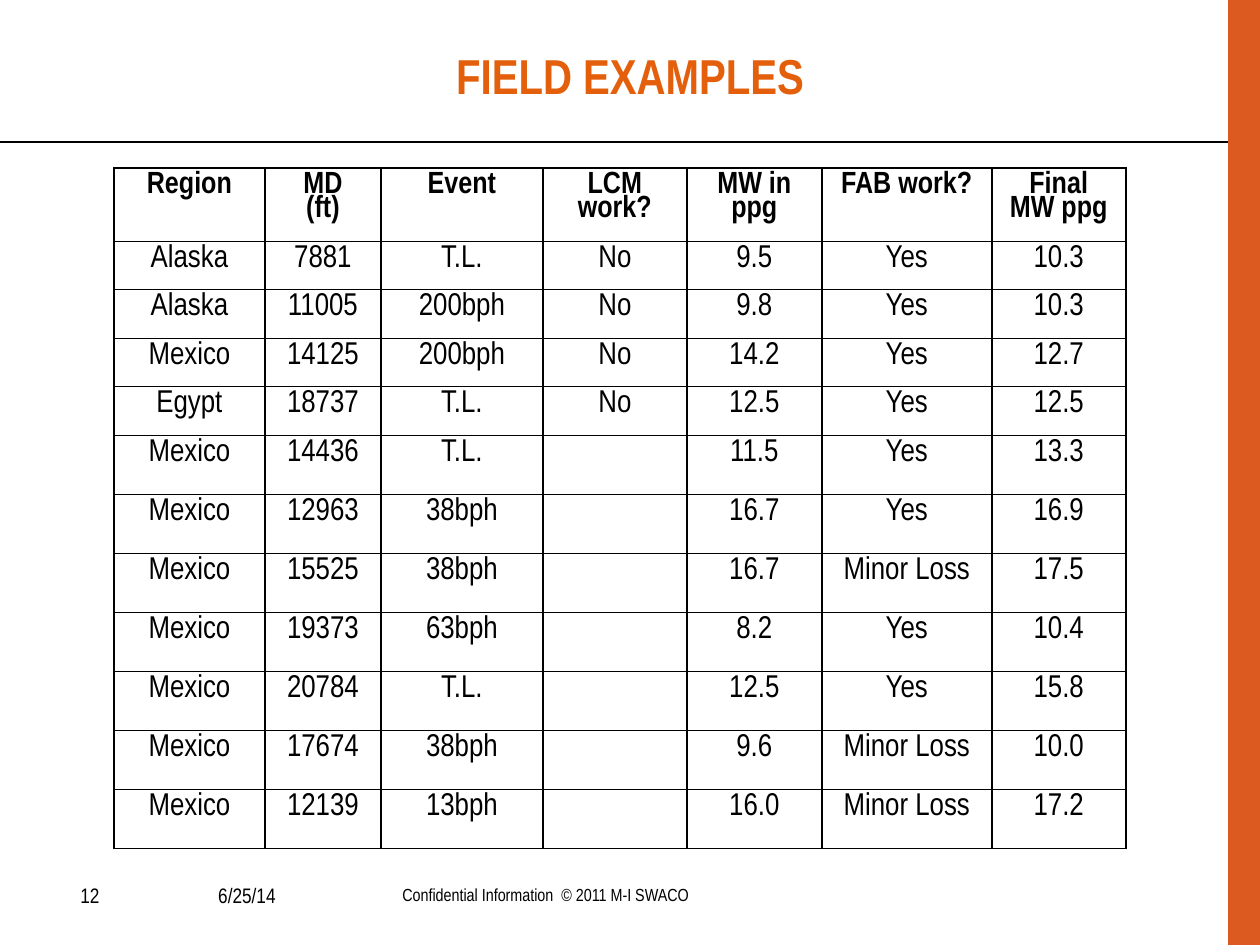
from lxml.etree import SubElement
from pptx import Presentation
from pptx.dml.color import RGBColor
from pptx.enum.shapes import MSO_CONNECTOR, MSO_SHAPE
from pptx.enum.text import MSO_ANCHOR, PP_ALIGN
from pptx.oxml.ns import qn
from pptx.util import Emu, Pt

FONT = "Arial Narrow"
COLORS = {"black": "000000", "title": "E35F0B", "band": "DC5A20"}


def px(value):
    return Emu(round(value * 914400 / 126))


def write(text_frame, text, size, align, color="black", bold=False, spacing=None):
    text_frame.text = text
    for paragraph in text_frame.paragraphs:
        paragraph.alignment = align
        if spacing:
            paragraph.line_spacing = spacing
        for run in paragraph.runs:
            run.font.name = FONT
            run.font.size = Pt(size)
            run.font.bold = bold
            run.font.color.rgb = RGBColor.from_string(COLORS[color])


presentation = Presentation()
presentation.slide_width = px(1260)
presentation.slide_height = px(945)
slide = presentation.slides.add_slide(presentation.slide_layouts[6])

band = slide.shapes.add_shape(MSO_SHAPE.RECTANGLE, px(1228), 0, px(32), px(945))
band.shadow.inherit = False
band.fill.solid()
band.fill.fore_color.rgb = RGBColor.from_string(COLORS["band"])
band.line.fill.background()

rule = slide.shapes.add_connector(MSO_CONNECTOR.STRAIGHT, 0, px(142), px(1228), px(142))
rule.line.width = Pt(0.75)
rule.line.color.rgb = RGBColor.from_string(COLORS["black"])
SubElement(rule.element.spPr, qn("a:effectLst"))

text_boxes = [
    ("FIELD EXAMPLES", (63, 22, 1134, 105), 28, PP_ALIGN.CENTER, "title", True, MSO_ANCHOR.MIDDLE),
    ("12", (68, 876, 53, 38), 12, PP_ALIGN.LEFT, "black", False, MSO_ANCHOR.TOP),
    ("6/25/14", (121, 876, 252, 38), 12, PP_ALIGN.CENTER, "black", False, MSO_ANCHOR.TOP),
    ("Confidential Information  © 2011 M-I SWACO", (262, 878, 567, 34), 10,
     PP_ALIGN.CENTER, "black", False, MSO_ANCHOR.TOP),
]
for text, box, size, align, color, bold, anchor in text_boxes:
    shape = slide.shapes.add_textbox(*[px(length) for length in box])
    shape.text_frame.word_wrap = True
    shape.text_frame.vertical_anchor = anchor
    write(shape.text_frame, text, size, align, color, bold)

field_rows = [
    ("Region", "MD\n(ft)", "Event", "LCM work?", "MW in ppg", "FAB work?", "Final MW ppg"),
    ("Alaska", "7881", "T.L.", "No", "9.5", "Yes", "10.3"),
    ("Alaska", "11005", "200bph", "No", "9.8", "Yes", "10.3"),
    ("Mexico", "14125", "200bph", "No", "14.2", "Yes", "12.7"),
    ("Egypt", "18737", "T.L.", "No", "12.5", "Yes", "12.5"),
    ("Mexico", "14436", "T.L.", "", "11.5", "Yes", "13.3"),
    ("Mexico", "12963", "38bph", "", "16.7", "Yes", "16.9"),
    ("Mexico", "15525", "38bph", "", "16.7", "Minor Loss", "17.5"),
    ("Mexico", "19373", "63bph", "", "8.2", "Yes", "10.4"),
    ("Mexico", "20784", "T.L.", "", "12.5", "Yes", "15.8"),
    ("Mexico", "17674", "38bph", "", "9.6", "Minor Loss", "10.0"),
    ("Mexico", "12139", "13bph", "", "16.0", "Minor Loss", "17.2"),
]
column_widths = [151, 116, 162, 144, 135, 170, 134]
row_heights = [73] + [48, 49] * 2 + [59] * 7

table = slide.shapes.add_table(
    len(row_heights), len(column_widths), px(114), px(168),
    px(sum(column_widths)), px(sum(row_heights))).table
table.first_row = False
table.horz_banding = False
for column, width in zip(table.columns, column_widths):
    column.width = px(width)
for row, height in zip(table.rows, row_heights):
    row.height = px(height)

for row_index, values in enumerate(field_rows):
    header = row_index == 0
    for column_index, value in enumerate(values):
        cell = table.cell(row_index, column_index)
        write(cell.text_frame, value, 17.5 if header else 18, PP_ALIGN.CENTER,
              bold=header, spacing=0.83)
        properties = cell._tc.get_or_add_tcPr()
        for side in ("a:lnL", "a:lnR", "a:lnT", "a:lnB"):
            border = SubElement(properties, qn(side), w=str(Pt(1)))
            fill = SubElement(border, qn("a:solidFill"))
            SubElement(fill, qn("a:srgbClr"), val=COLORS["black"])
        cell.fill.background()

presentation.save("out.pptx")
